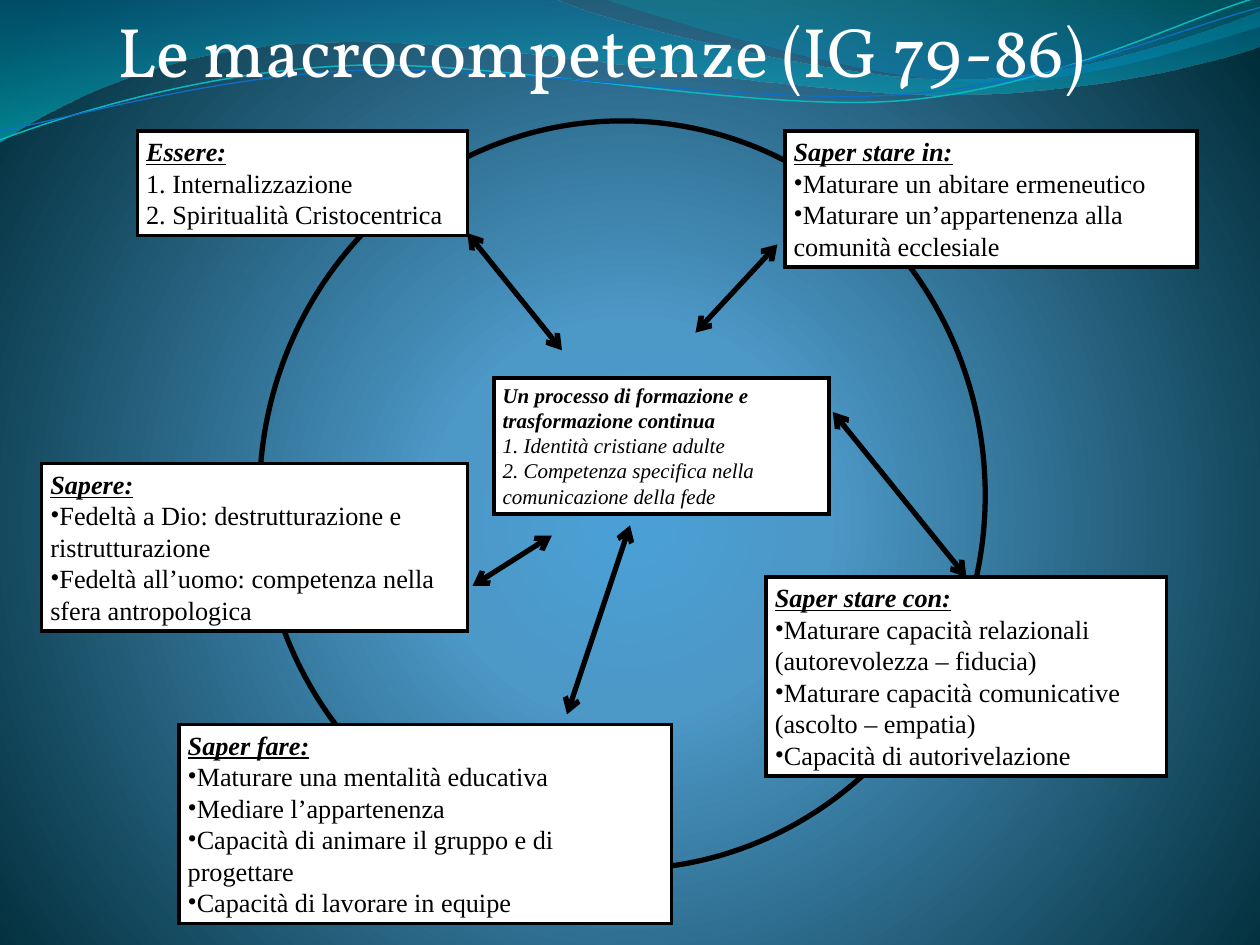
from dataclasses import dataclass
from math import cos, radians, sin

from lxml import etree
from pptx import Presentation
from pptx.dml.color import RGBColor
from pptx.enum.shapes import MSO_CONNECTOR, MSO_SHAPE
from pptx.enum.text import MSO_ANCHOR, MSO_AUTO_SIZE, PP_ALIGN
from pptx.oxml import parse_xml
from pptx.oxml.ns import qn
from pptx.util import Inches, Pt

RECT, OVAL = MSO_SHAPE.RECTANGLE, MSO_SHAPE.OVAL
STRAIGHT = MSO_CONNECTOR.STRAIGHT
TOP_SIDE = 0
NS = ('xmlns:a="http://schemas.openxmlformats.org/drawingml/2006/main" '
      'xmlns:p="http://schemas.openxmlformats.org/presentationml/2006/main"')


@dataclass(frozen=True)
class Theme:
    ink: str = "000000"
    paper: str = "FFFFFF"
    title_font: str = "Vollkorn"
    body_font: str = "Times New Roman"
    title_size: int = 40
    body_size: int = 15
    centre_size: int = 12
    box_line: int = 2
    ring_line: int = 3
    # Gradient stops: position %, colour, opacity %
    background: tuple = ((0, "4AA0D6", 100), (25, "4C98C7", 100), (100, "002C38", 100))
    wave_left: tuple = ((0, "0074A1", 45), (100, "00C6CF", 55))
    wave_right: tuple = ((0, "00A1A9", 30), (80, "008BBF", 45))
    thread_teal: str = "0AB8BF"
    thread_blue: str = "0F6FC6"


T = Theme()
TITLE = "Le macrocompetenze (IG 79-86)"
RING = (2.06, 0.96, 5.76, 5.94)

# name: (left, top, width, height), heading, lines, bulleted
BOXES = {
    "essere": ((1.09, 1.04, 2.62, 0.83), "Essere:",
               ["1. Internalizzazione", "2. Spiritualità Cristocentrica"], False),
    "sapere": ((0.33, 3.68, 3.38, 1.33), "Sapere:",
               ["Fedeltà a Dio: destrutturazione e ristrutturazione",
                "Fedeltà all’uomo: competenza nella sfera antropologica"], True),
    "fare": ((1.42, 5.75, 3.91, 1.58), "Saper fare:",
             ["Maturare una mentalità educativa", "Mediare l’appartenenza",
              "Capacità di animare il gruppo e di progettare",
              "Capacità di lavorare in equipe"], True),
    "stare con": ((6.08, 4.58, 3.18, 1.58), "Saper stare con:",
                  ["Maturare capacità relazionali (autorevolezza – fiducia)",
                   "Maturare capacità comunicative (ascolto – empatia)",
                   "Capacità di autorivelazione"], True),
    "centro": ((3.92, 3, 2.66, 1.08), "Un processo di formazione e trasformazione continua",
               ["1. Identità cristiane adulte",
                "2. Competenza specifica nella comunicazione della fede"], False),
    "stare in": ((6.23, 1.04, 3.27, 1.08), "Saper stare in:",
                 ["Maturare un abitare ermeneutico",
                  "Maturare un’appartenenza alla comunità ecclesiale"], True),
}

# start, end, box whose top middle the end is joined to
ARROWS = [
    ((3.71, 1.85), (4.46, 2.78), None),
    ((3.75, 4.65), (4.38, 4.25), None),
    ((6.17, 1.94), (5.52, 2.64), None),
    ((5, 4.17), (4.5, 5.67), None),
    ((6.61, 3.27), (7.67, 4.58), "stare con"),
]

# Each step is a line end (2 numbers) or a Bézier curve (6 numbers)
WAVES = [
    (T.wave_left, [(0, 0), (4.4, -0.01), (4.76, 0.17, 6.64, 0.63, 7.58, 0.63),
                   (8.53, 0.63, 9.58, 0.26, 10, 0.09), (10.01, 0.36),
                   (9.83, 0.44, 8.7, 0.76, 7.46, 0.75),
                   (6.22, 0.75, 3.82, 0.28, 2.57, 0.34),
                   (1.29, 0.36, 0.46, 0.83, -0.01, 1.13), (0, 0)]),
    (T.wave_right, [(4.79, -0.01), (5.09, 0.11, 6.82, 0.62, 7.69, 0.65),
                    (8.56, 0.69, 9.61, 0.32, 10, 0.21), (10, 0), (4.79, -0.01)]),
]
TILT = -2.7
# colour, line width, centre of rotation, steps
THREADS = [
    (T.thread_teal, 0.85, (4.99, 0.58),
     [(0, 1.11), (0.48, 0.93, 1.58, 0.57, 2.77, 0.52),
      (3.95, 0.47, 5.93, 0.89, 7.13, 0.8), (8.33, 0.71, 9.38, 0.15, 9.98, -0.02)]),
    (T.thread_blue, 0.75, (5, 0.59),
     [(0, 1.04), (0.47, 0.96, 1.64, 0.61, 2.83, 0.56),
      (4.03, 0.51, 5.97, 0.84, 7.17, 0.75), (8.36, 0.67, 9.41, 0.21, 10, 0.06)]),
]


def rgb(colour):
    return RGBColor.from_string(colour)


def gradient_xml(stops, direction):
    gs = "".join(f'<a:gs pos="{pos * 1000}"><a:srgbClr val="{colour}">'
                 f'<a:alpha val="{alpha * 1000}"/></a:srgbClr></a:gs>'
                 for pos, colour, alpha in stops)
    return f'<a:gradFill {NS} rotWithShape="1"><a:gsLst>{gs}</a:gsLst>{direction}</a:gradFill>'


def set_background(slide):
    circle = ('<a:path path="circle"><a:fillToRect l="10000" t="110000" '
              'r="10000" b="100000"/></a:path>')
    fill = gradient_xml(T.background, circle)
    slide.element.cSld.insert(0, parse_xml(
        f"<p:bg {NS}><p:bgPr>{fill}<a:effectLst/></p:bgPr></p:bg>"))


def turn(step, centre, degrees):
    """Rotate every point of a step about the centre."""
    (cx, cy), c, s = centre, cos(radians(degrees)), sin(radians(degrees))
    pairs = [(x - cx, y - cy) for x, y in zip(step[::2], step[1::2])]
    return tuple(v for x, y in pairs for v in (cx + x * c - y * s, cy + x * s + y * c))


def add_outline(slide, steps, close):
    """Draw all points as a polygon, then merge each curve's three points."""
    points = [(Inches(x), Inches(y)) for step in steps for x, y in zip(step[::2], step[1::2])]
    builder = slide.shapes.build_freeform(*points[0])
    builder.add_line_segments(points[1:], close=close)
    s = builder.convert_to_shape()
    lines = iter(list(s.element.iter(qn("a:lnTo"))))
    for step in steps[1:]:
        line = next(lines)
        if len(step) == 6:
            curve = etree.Element(qn("a:cubicBezTo"))
            line.addprevious(curve)
            for part in (line, next(lines), next(lines)):
                curve.append(part[0])
                part.getparent().remove(part)
    s.shadow.inherit = False
    s.fill.background()
    return s


def add_waves(slide):
    for stops, steps in WAVES:
        s = add_outline(slide, steps, True)
        s.line.fill.background()
        no_fill = s.element.spPr.find(qn("a:noFill"))
        no_fill.getparent().replace(
            no_fill, parse_xml(gradient_xml(stops, '<a:lin ang="5400000" scaled="1"/>')))
    for colour, width, centre, steps in THREADS:
        s = add_outline(slide, [turn(step, centre, -TILT) for step in steps], False)
        s.rotation = TILT
        s.line.color.rgb, s.line.width = rgb(colour), Pt(width)


def set_title(slide):
    title = slide.shapes.title
    title.left, title.top, title.width, title.height = map(Inches, (0.37, -0.49, 8.8, 1.22))
    slide.shapes.element.append(title.element)  # in front of the waves
    tf = title.text_frame
    tf.text, tf.auto_size, tf.vertical_anchor = TITLE, MSO_AUTO_SIZE.NONE, MSO_ANCHOR.BOTTOM
    tf.margin_left = tf.margin_right = tf.margin_bottom = 0
    tf.margin_top = Inches(0.04)
    p = tf.paragraphs[0]
    p.alignment = PP_ALIGN.CENTER
    p.font.name, p.font.size, p.font.color.rgb = T.title_font, Pt(T.title_size), rgb(T.paper)


def add_plain(slide, kind, place, width):
    s = slide.shapes.add_shape(kind, *map(Inches, place))
    s.shadow.inherit = False
    s.fill.background()
    s.line.color.rgb, s.line.width = rgb(T.ink), Pt(width)
    etree.SubElement(s.line._get_or_add_ln(), qn("a:miter"), lim="800000")
    return s


def add_box(slide, place, heading, lines, bulleted, centre):
    s = add_plain(slide, RECT, place, T.box_line)
    s.fill.solid()
    s.fill.fore_color.rgb = rgb(T.paper)
    tf = s.text_frame
    tf.word_wrap, tf.auto_size = True, MSO_AUTO_SIZE.SHAPE_TO_FIT_TEXT
    tf.vertical_anchor = MSO_ANCHOR.TOP
    tf.margin_left = tf.margin_right = Pt(5)
    tf.margin_top = tf.margin_bottom = Pt(2.5)
    for i, text in enumerate([heading, *lines]):
        p = tf.paragraphs[0] if i == 0 else tf.add_paragraph()
        p.text, p.alignment = text, PP_ALIGN.LEFT
        f = p.font
        f.name, f.color.rgb = T.body_font, rgb(T.ink)
        f.size = Pt(T.centre_size if centre else T.body_size)
        f.bold, f.italic, f.underline = i == 0, i == 0 or centre, i == 0 and not centre
        if bulleted and i:
            pPr = p._p.get_or_add_pPr()
            pPr.insert(0, etree.Element(qn("a:buFont"), typeface=T.body_font))
            pPr.insert(1, etree.Element(qn("a:buChar"), char="•"))
    return s


def add_arrow(slide, start, end, joined):
    c = slide.shapes.add_connector(STRAIGHT, *map(Inches, start + end))
    if joined:
        c.end_connect(joined, TOP_SIDE)
    c.line.color.rgb, c.line.width = rgb(T.ink), Pt(T.ring_line)
    for tag in ("a:headEnd", "a:tailEnd"):
        etree.SubElement(c.line._get_or_add_ln(), qn(tag), type="arrow")
    etree.SubElement(c.element.spPr, qn("a:effectLst"))


def main():
    prs = Presentation()
    prs.slide_width, prs.slide_height = Inches(10), Inches(7.5)
    slide = prs.slides.add_slide(prs.slide_layouts[5])
    set_background(slide)
    add_waves(slide)
    set_title(slide)
    add_plain(slide, OVAL, RING, T.ring_line)
    boxes = {name: add_box(slide, *box, name == "centro") for name, box in BOXES.items()}
    for start, end, target in ARROWS:
        add_arrow(slide, start, end, boxes.get(target))
    prs.save("out.pptx")


if __name__ == "__main__":
    main()
